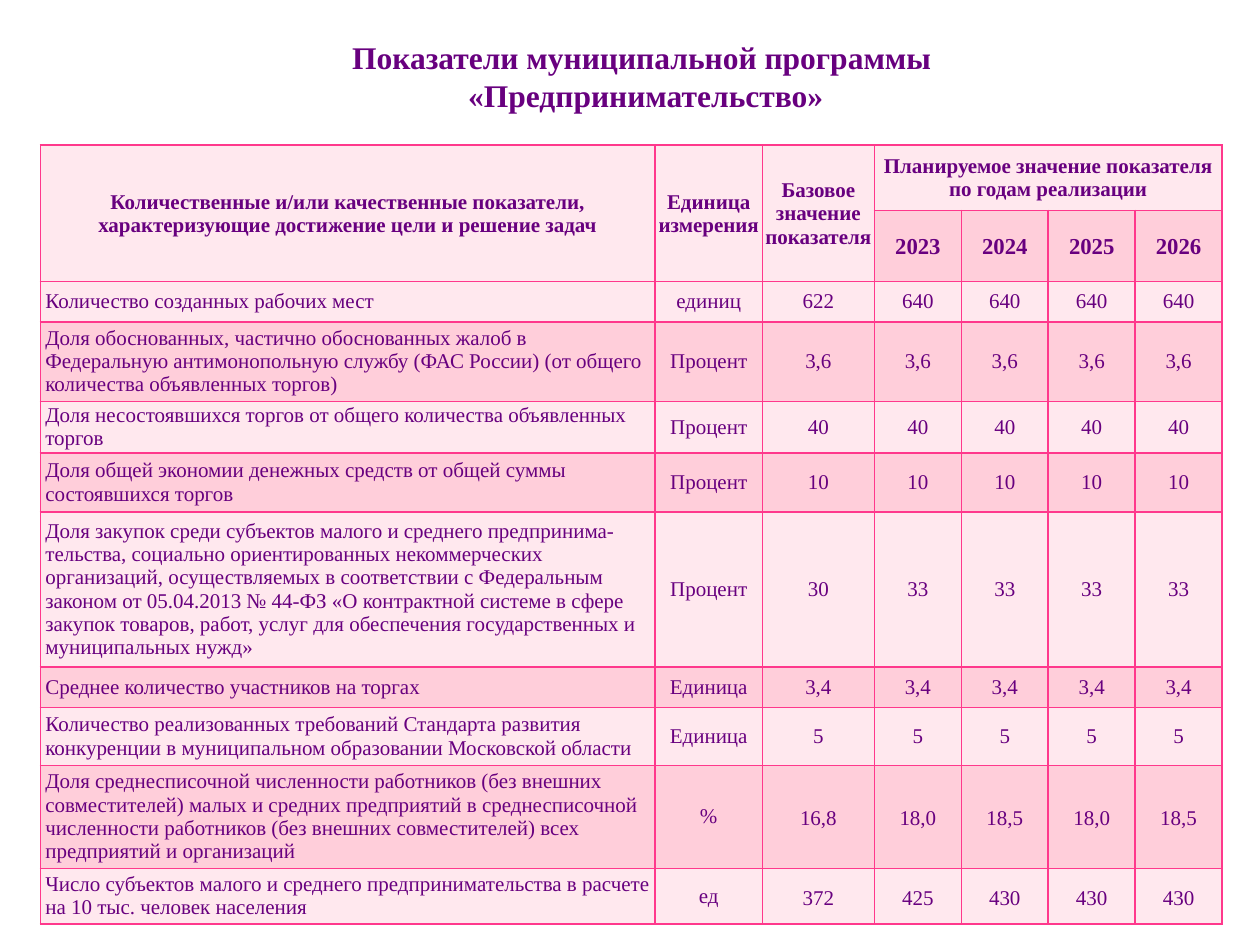
from lxml import etree
from pptx import Presentation
from pptx.dml.color import RGBColor
from pptx.enum import text
from pptx.oxml import ns
from pptx.util import Inches, Pt

PURPLE = RGBColor(0x68, 0x00, 0x7F)
PINK = RGBColor(0xFF, 0x38, 0x8C)
LIGHT = RGBColor(0xFF, 0xE8, 0xEE)
ROSE = RGBColor(0xFF, 0xCE, 0xDA)
FONT = "Times New Roman"

COLUMN_WIDTHS = [4.88, 0.85, 0.89] + [0.69] * 4
ROW_HEIGHTS = [0.52, 0.28, 0.32, 0.63, 0.41, 0.47, 1.23, 0.32, 0.46, 0.82, 0.44]
HEADINGS = [
    "Количественные и/или качественные показатели, характеризующие достижение цели и решение задач",
    "Единица измерения",
    "Базовое значение показателя",
    "Планируемое значение показателя по годам реализации",
]
YEARS = ["2023", "2024", "2025", "2026"]
INDICATORS = [
    ("Количество созданных рабочих мест", "единиц", "622", ["640"] * 4),
    ("Доля обоснованных, частично обоснованных жалоб в Федеральную антимонопольную службу "
     "(ФАС России) (от общего количества объявленных торгов)", "Процент", "3,6", ["3,6"] * 4),
    ("Доля несостоявшихся торгов от общего количества объявленных торгов",
     "Процент", "40", ["40"] * 4),
    ("Доля общей экономии денежных средств от общей суммы состоявшихся торгов",
     "Процент", "10", ["10"] * 4),
    ("Доля закупок среди субъектов малого и среднего предпринима-тельства, социально "
     "ориентированных некоммерческих организаций, осуществляемых в соответствии с Федеральным "
     "законом от 05.04.2013 № 44-ФЗ «О контрактной системе в сфере закупок товаров, работ, услуг "
     "для обеспечения государственных и муниципальных нужд»", "Процент", "30", ["33"] * 4),
    ("Среднее количество участников на торгах", "Единица", "3,4", ["3,4"] * 4),
    ("Количество реализованных требований Стандарта развития конкуренции в муниципальном "
     "образовании Московской области", "Единица", "5", ["5"] * 4),
    ("Доля среднесписочной численности работников (без внешних совместителей) малых и средних "
     "предприятий в среднесписочной численности работников (без внешних совместителей) всех "
     "предприятий и организаций", "%", "16,8", ["18,0", "18,5", "18,0", "18,5"]),
    ("Число субъектов малого и среднего предпринимательства в расчете на 10 тыс. человек населения",
     "ед", "372", ["425", "430", "430", "430"]),
]


def format_runs(paragraph, size, bold):
    for run in paragraph.runs:
        run.font.name = FONT
        run.font.size = Pt(size)
        run.font.bold = bold
        run.font.color.rgb = PURPLE


def add_borders(cell):
    properties = cell._tc.get_or_add_tcPr()
    for position, side in enumerate(("a:lnL", "a:lnR", "a:lnT", "a:lnB")):
        line = etree.Element(ns.qn(side), w=str(Pt(1)))
        fill = etree.SubElement(line, ns.qn("a:solidFill"))
        etree.SubElement(fill, ns.qn("a:srgbClr"), val=str(PINK))
        properties.insert(position, line)


def format_cell(cell, fill, side_margin, size=12, bold=False, align=text.PP_ALIGN.CENTER):
    cell.fill.solid()
    cell.fill.fore_color.rgb = fill
    add_borders(cell)
    cell.vertical_anchor = text.MSO_ANCHOR.MIDDLE
    cell.margin_left = cell.margin_right = Inches(side_margin)
    cell.margin_top = Inches(0.01 if bold else 0)
    cell.margin_bottom = 0
    paragraph = cell.text_frame.paragraphs[0]
    paragraph.alignment = align
    format_runs(paragraph, size, bold)


def place_title(slide, left, top, width, height):
    title = slide.shapes.title
    title.left, title.top, title.width, title.height = left, top, width, height
    title.text_frame.text = "Показатели муниципальной программы \v«Предпринимательство»"
    title.text_frame.vertical_anchor = text.MSO_ANCHOR.MIDDLE
    paragraph = title.text_frame.paragraphs[0]
    paragraph.alignment = text.PP_ALIGN.CENTER
    format_runs(paragraph, 18, True)


def fill_header(table):
    for column, heading in enumerate(HEADINGS):
        table.cell(0, column).text_frame.text = heading
    for column, year in enumerate(YEARS, 3):
        table.cell(1, column).text_frame.text = year
    for column in range(len(COLUMN_WIDTHS)):
        format_cell(table.cell(0, column), LIGHT, 0.01, bold=True)
        is_year = column >= 3
        format_cell(table.cell(1, column), ROSE if is_year else LIGHT, 0.01,
                    size=13 if is_year else 12, bold=True)
    for column in range(3):
        table.cell(0, column).merge(table.cell(1, column))
    table.cell(0, 3).merge(table.cell(0, 6))


def fill_indicators(table):
    for row, (name, unit, base, plan) in enumerate(INDICATORS, 2):
        fill = ROSE if row % 2 else LIGHT
        is_last_group = row >= 9
        for column, value in enumerate([name, unit, base, *plan]):
            cell = table.cell(row, column)
            cell.text_frame.text = value
            if column == 0:
                format_cell(cell, fill, 0.04, align=text.PP_ALIGN.LEFT)
            else:
                format_cell(cell, fill, 0.01 if is_last_group and column == 1 else 0.07)
            if is_last_group and column >= 2:
                cell.text_frame.paragraphs[0].line_spacing = 1.15


def place_table(slide, left, top, width, height):
    shape = slide.shapes.add_table(len(ROW_HEIGHTS), len(COLUMN_WIDTHS), left, top, width, height)
    table = shape.table
    table.first_row = table.horz_banding = False
    for column, column_width in zip(table.columns, COLUMN_WIDTHS):
        column.width = Inches(column_width)
    for row, row_height in zip(table.rows, ROW_HEIGHTS):
        row.height = Inches(row_height)
    fill_header(table)
    fill_indicators(table)


def main():
    presentation = Presentation()
    presentation.slide_width = Inches(10)
    presentation.slide_height = Inches(7.5)
    slide = presentation.slides.add_slide(presentation.slide_layouts[5])
    place_title(slide, Inches(0.91), Inches(0.21), Inches(8.43), Inches(0.79))
    place_table(slide, Inches(0.32), Inches(1.15), Inches(9.36), Inches(5.91))
    presentation.save("out.pptx")


if __name__ == "__main__":
    main()
